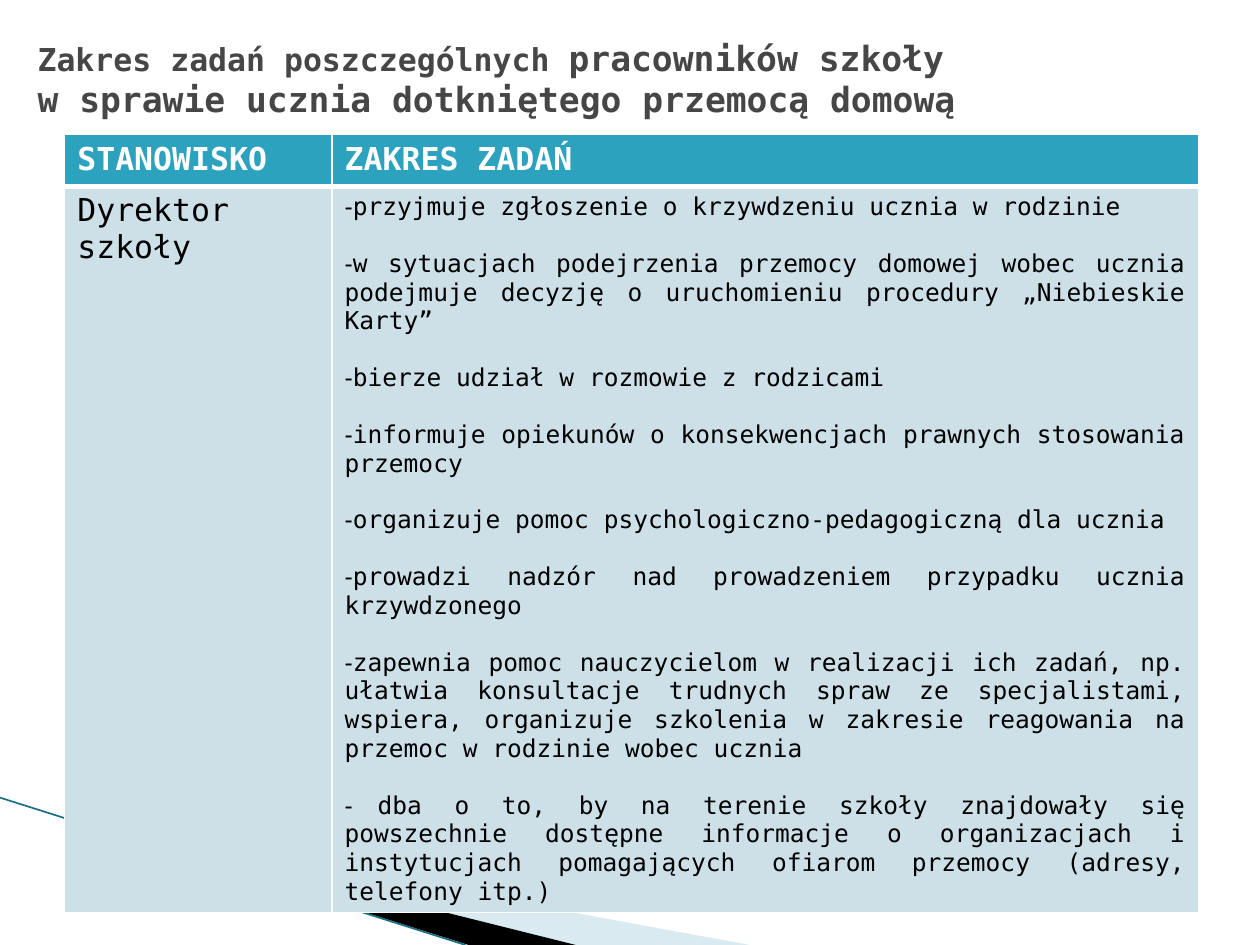
from dataclasses import dataclass

import pptx
import pptx.dml.color
import pptx.enum.shapes
import pptx.enum.text
import pptx.oxml
import pptx.oxml.ns
import pptx.util
from lxml import etree

Pt = pptx.util.Pt
RGBColor = pptx.dml.color.RGBColor
qn = pptx.oxml.ns.qn

WHITE = RGBColor(0xFF, 0xFF, 0xFF)
BLACK = RGBColor(0, 0, 0)
GRAY = RGBColor(0x46, 0x46, 0x46)
TEAL = RGBColor(0x2D, 0xA2, 0xBF)
DARK_TEAL = RGBColor(0x1A, 0x6F, 0x85)
PALE_TEAL = RGBColor(0xCD, 0xE0, 0xE8)
SKY = RGBColor(0xA0, 0xCB, 0xDC)
FONT = "DejaVu Sans Mono"
DASH_FONT = "Arial"


@dataclass
class Wedge:
    points: list[tuple[float, float]]
    color: RGBColor
    opacity: int = 100


WEDGES = [
    Wedge([(39.6, 468.7), (428.4, 540), (328.3, 540), (39.6, 468)], SKY, 40),
    Wedge([(38.2, 467.3), (329, 540), (267.8, 540), (38.9, 468)], BLACK),
]
TASKS = [
    "przyjmuje zgłoszenie o krzywdzeniu ucznia w rodzinie",
    "w sytuacjach podejrzenia przemocy domowej wobec ucznia podejmuje decyzję "
    "o uruchomieniu procedury „Niebieskie Karty”",
    "bierze udział w rozmowie z rodzicami",
    "informuje opiekunów o konsekwencjach prawnych stosowania przemocy",
    "organizuje pomoc psychologiczno-pedagogiczną dla ucznia",
    "prowadzi nadzór nad prowadzeniem przypadku ucznia krzywdzonego",
    "zapewnia pomoc nauczycielom w realizacji ich zadań, np. ułatwia konsultacje "
    "trudnych spraw ze specjalistami, wspiera, organizuje szkolenia w zakresie "
    "reagowania na przemoc w rodzinie wobec ucznia",
]
LAST_TASK = (
    "dba o to, by na terenie szkoły znajdowały się powszechnie dostępne informacje "
    "o organizacjach i instytucjach pomagających ofiarom przemocy "
    "(adresy, telefony itp.)"
)


def add_text(p, text: str, *, size: float = 18, color: RGBColor = BLACK,
             bold: bool = False, font: str = FONT) -> None:
    r = p.add_run()
    r.text = text
    r.font.name = font
    r.font.size = Pt(size)
    r.font.bold = bold
    r.font.color.rgb = color


def add_wedge(s, wedge: Wedge) -> None:
    start, *rest = [(Pt(x), Pt(y)) for x, y in wedge.points]
    builder = s.shapes.build_freeform(*start)
    builder.add_line_segments(rest)
    sp = builder.convert_to_shape()
    sp.shadow.inherit = False
    sp.line.fill.background()
    sp.fill.solid()
    sp.fill.fore_color.rgb = wedge.color
    if wedge.opacity < 100:
        clr = sp.fill._xPr.find(".//" + qn("a:srgbClr"))
        etree.SubElement(clr, qn("a:alpha"), val=str(wedge.opacity * 1000))


def add_edge_line(s) -> None:
    line = s.shapes.add_connector(pptx.enum.shapes.MSO_CONNECTOR.STRAIGHT,
                                  Pt(0), Pt(455.8), Pt(266), Pt(540))
    line.line.color.rgb = DARK_TEAL
    line.line.width = Pt(0.95)
    etree.SubElement(line._element.spPr, qn("a:effectLst"))


def format_cell(cell, fill: RGBColor, **borders: float) -> None:
    """Fill the cell and give it white borders, with widths by side (L, R, T, B)."""
    tc_pr = cell._tc.get_or_add_tcPr()
    for side in "LRTB":
        ln = etree.SubElement(tc_pr, qn(f"a:ln{side}"), w=str(Pt(borders.get(side, 1))))
        solid = etree.SubElement(ln, qn("a:solidFill"))
        etree.SubElement(solid, qn("a:srgbClr"), val=str(WHITE))
    cell.fill.solid()
    cell.fill.fore_color.rgb = fill


def add_dash_bullet(p) -> None:
    p_pr = p._p.get_or_add_pPr()
    p_pr.set("marL", "0")
    p_pr.set("indent", "0")
    etree.SubElement(p_pr, qn("a:buFont"), typeface=DASH_FONT)
    etree.SubElement(p_pr, qn("a:buChar"), char="-")


def add_title(s) -> None:
    tf = s.shapes.add_textbox(Pt(14.4), Pt(20.9), Pt(648), Pt(90)).text_frame
    tf.word_wrap = True
    tf.margin_top = tf.margin_bottom = 0
    p = tf.paragraphs[0]
    add_text(p, "Zakres zadań poszczególnych ", color=GRAY, bold=True)
    add_text(p, "pracowników szkoły", size=19.8, color=GRAY, bold=True)
    p.add_line_break()
    add_text(p, "w sprawie ucznia dotkniętego przemocą domową",
             size=19.8, color=GRAY, bold=True)


def fill_tasks(tf) -> None:
    for i in range(len(TASKS) + 1):
        p = tf.add_paragraph() if i else tf.paragraphs[0]
        if i < len(TASKS):
            add_dash_bullet(p)
            add_text(p, TASKS[i], size=14)
        else:
            add_text(p, "- ", size=14, font=DASH_FONT)
            add_text(p, LAST_TASK, size=14)
        p.alignment = pptx.enum.text.PP_ALIGN.JUSTIFY
        if i:
            p.space_before = Pt(16)


def add_duties_table(s) -> None:
    table = s.shapes.add_table(2, 2, Pt(37), Pt(77), Pt(648), Pt(442)).table
    for column, width in zip(table.columns, (152.8, 495.2)):
        column.width = Pt(width)
    for row, height in zip(table.rows, (29.5, 412.5)):
        row.height = Pt(height)
    for i, heading in enumerate(("STANOWISKO", "ZAKRES ZADAŃ")):
        format_cell(table.cell(0, i), TEAL, B=3)
        format_cell(table.cell(1, i), PALE_TEAL, T=3)
        add_text(table.cell(0, i).text_frame.paragraphs[0], heading,
                 color=WHITE, bold=True)
    add_text(table.cell(1, 0).text_frame.paragraphs[0], "Dyrektor szkoły")
    fill_tasks(table.cell(1, 1).text_frame)


def main() -> None:
    prs = pptx.Presentation()
    prs.slide_width, prs.slide_height = Pt(720), Pt(540)
    s = prs.slides.add_slide(prs.slide_layouts[6])
    for wedge in WEDGES:
        add_wedge(s, wedge)
    add_edge_line(s)
    add_duties_table(s)
    add_title(s)
    prs.save("out.pptx")


if __name__ == "__main__":
    main()
